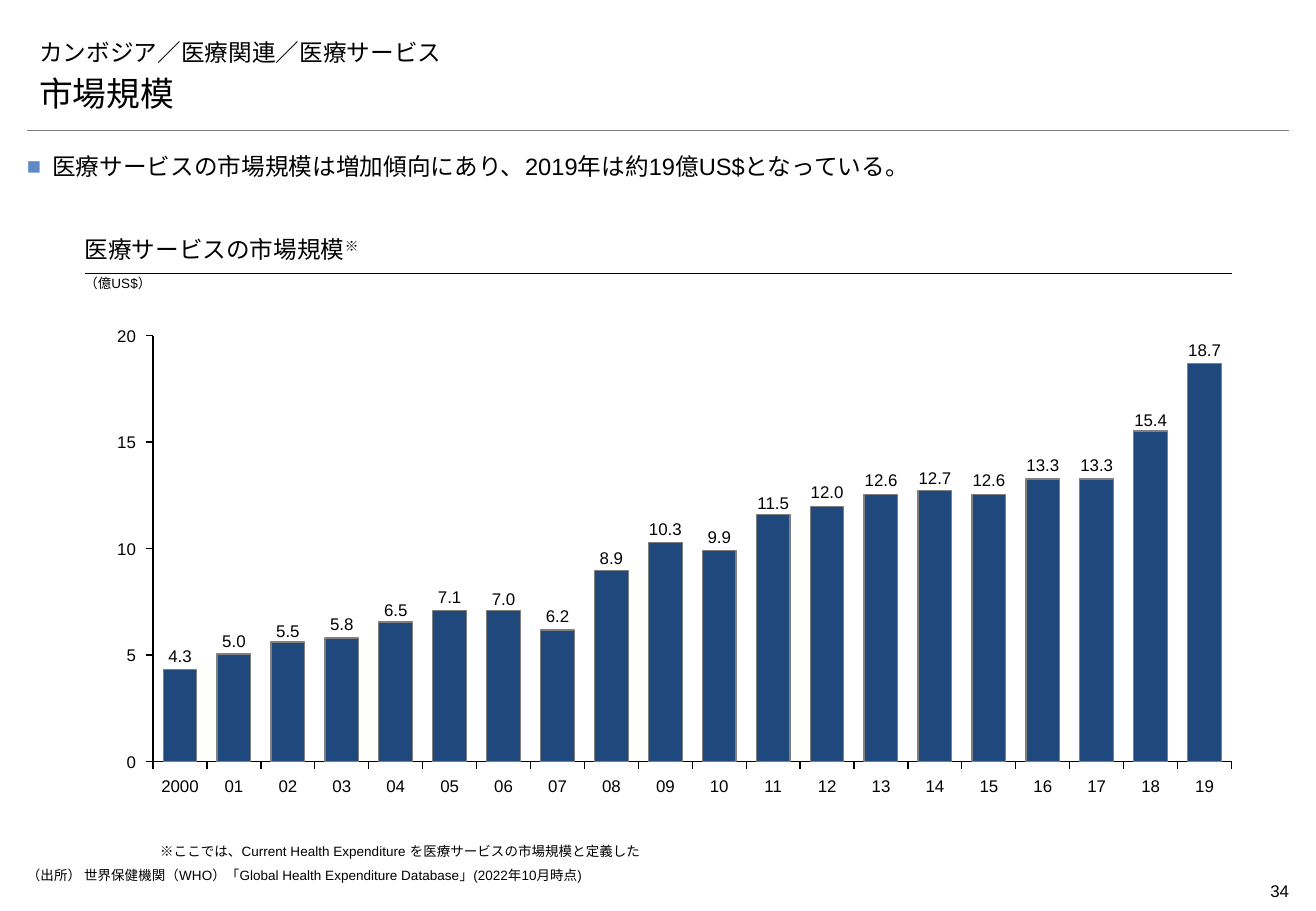
from lxml.etree import SubElement
from pptx import Presentation
from pptx.chart.data import CategoryChartData
from pptx.dml.color import RGBColor
from pptx.enum.chart import XL_CHART_TYPE as ChartType, XL_TICK_LABEL_POSITION as LabelPos, XL_TICK_MARK as Tick
from pptx.enum.shapes import MSO_CONNECTOR as Connector
from pptx.enum.text import MSO_ANCHOR as Anchor, MSO_AUTO_SIZE as AutoSize, PP_ALIGN as Align
from pptx.oxml.ns import qn
from pptx.util import Pt

YEARS = ["2000"] + [f"{year:02}" for year in range(1, 20)]
SPENDING = [4.3, 5.0, 5.5, 5.8, 6.5, 7.1, 7.0, 6.2, 8.9, 10.3,
            9.9, 11.5, 12.0, 12.6, 12.7, 12.6, 13.3, 13.3, 15.4, 18.7]
BAR_HEIGHTS = [23, 27, 30, 31, 35, 38, 38, 33, 48, 55,
               53, 62, 64, 67, 68, 67, 71, 71, 83, 100]
CHART_LEFT, CHART_TOP, CHART_WIDTH, CHART_HEIGHT = 84.2, 193.7, 652.3, 265.7
PLOT_LAYOUT = {"x": 0.01, "y": 0.02, "w": 0.98, "h": 0.95}
PLOT_LEFT = CHART_LEFT + PLOT_LAYOUT["x"] * CHART_WIDTH
PLOT_HEIGHT = PLOT_LAYOUT["h"] * CHART_HEIGHT
BASELINE = CHART_TOP + PLOT_LAYOUT["y"] * CHART_HEIGHT + PLOT_HEIGHT
YEAR_STEP = PLOT_LAYOUT["w"] * CHART_WIDTH / len(YEARS)
AXIS_TOP = 20
LABEL_HEIGHT = 12


def color(hex_code):
    return RGBColor.from_string(hex_code)


def style_line(line, hex_code, width):
    line.color.rgb = color(hex_code)
    line.width = Pt(width)


def add_bullet(paragraph, mark, hex_code):
    props = paragraph._p.get_or_add_pPr()
    if not mark:
        SubElement(props, qn("a:buNone"))
        return
    fill = SubElement(props, qn("a:buClr"))
    SubElement(fill, qn("a:srgbClr"), val=hex_code)
    SubElement(props, qn("a:buFont"), typeface="Arial")
    SubElement(props, qn("a:buChar"), char=mark)


def write(holder, text, box, size=10, font="Arial", align=Align.LEFT, anchor=Anchor.TOP,
          insets=(0, 0, 0, 0), wrap=True, raised="", bullet="", hanging=0,
          line_spacing=1.0, after=0):
    holder.left, holder.top, holder.width, holder.height = map(Pt, box)
    frame = holder.text_frame
    frame.auto_size = AutoSize.NONE
    frame.word_wrap = wrap
    frame.vertical_anchor = anchor
    (frame.margin_left, frame.margin_top,
     frame.margin_right, frame.margin_bottom) = map(Pt, insets)
    paragraph = frame.paragraphs[0]
    add_bullet(paragraph, bullet, "5F8AC3")
    props = paragraph._p.get_or_add_pPr()
    props.set("marL", str(Pt(hanging)))
    props.set("indent", str(-Pt(hanging)))
    paragraph.alignment = align
    paragraph.line_spacing = line_spacing
    paragraph.space_before = Pt(0)
    paragraph.space_after = Pt(after)
    for part in filter(None, (text, raised)):
        run = paragraph.add_run()
        run.text = part
        run.font.size = Pt(size)
        run.font.name = font
        run.font.color.rgb = color("000000")
        if part == raised:
            run.font._element.set("baseline", "30000")


def add_text(slide, text, box, **style):
    write(slide.shapes.add_textbox(0, 0, 0, 0), text, box, **style)


def add_rule(slide, left, right, y, hex_code, width):
    rule = slide.shapes.add_connector(Connector.STRAIGHT, Pt(left), Pt(y), Pt(right), Pt(y))
    style_line(rule.line, hex_code, width)
    SubElement(rule._element.spPr, qn("a:effectLst"))


def style_axis(axis):
    axis.has_major_gridlines = False
    axis.major_tick_mark = Tick.OUTSIDE
    axis.minor_tick_mark = Tick.NONE
    axis.tick_label_position = LabelPos.NONE
    style_line(axis.format.line, "000000", 0.75)


def fix_plot_area(chart):
    plot_area = chart._chartSpace.chart.plotArea
    layout = plot_area.find(qn("c:layout"))
    if layout is None:
        layout = SubElement(plot_area, qn("c:layout"))
        plot_area.insert(0, layout)
    manual = SubElement(layout, qn("c:manualLayout"))
    settings = {"layoutTarget": "inner", "xMode": "edge", "yMode": "edge", **PLOT_LAYOUT}
    for tag, value in settings.items():
        SubElement(manual, qn(f"c:{tag}"), val=str(value))


def add_market_chart(slide):
    data = CategoryChartData()
    data.categories = YEARS
    data.add_series("医療サービスの市場規模", BAR_HEIGHTS)
    place = map(Pt, (CHART_LEFT, CHART_TOP, CHART_WIDTH, CHART_HEIGHT))
    chart = slide.shapes.add_chart(ChartType.COLUMN_STACKED, *place, data).chart
    chart.has_legend = False
    chart.has_title = False
    chart.font.size = Pt(10)
    chart.font.name = "Arial"
    chart.font.color.rgb = color("000000")
    fix_plot_area(chart)
    style_axis(chart.category_axis)
    style_axis(chart.value_axis)
    chart.value_axis.minimum_scale = 0
    chart.value_axis.maximum_scale = 107
    chart.value_axis.major_unit = 26.75
    plot = chart.plots[0]
    plot.gap_width = 60
    plot.overlap = 100
    plot.vary_by_categories = False
    bars = plot.series[0]
    bars.format.fill.solid()
    bars.format.fill.fore_color.rgb = color("1F497D")
    style_line(bars.format.line, "808080", 0.75)


def level(amount):
    return BASELINE - amount / AXIS_TOP * PLOT_HEIGHT


def add_chart_labels(slide):
    for amount in range(0, AXIS_TOP + 1, 5):
        add_text(slide, str(amount), (66.6, level(amount) - LABEL_HEIGHT / 2, 14, LABEL_HEIGHT),
                 align=Align.RIGHT, anchor=Anchor.MIDDLE, wrap=False)
    for index, (year, amount) in enumerate(zip(YEARS, SPENDING)):
        left = PLOT_LEFT + index * YEAR_STEP
        add_text(slide, year, (left, 460, YEAR_STEP, LABEL_HEIGHT),
                 align=Align.CENTER, wrap=False)
        add_text(slide, f"{amount:.1f}",
                 (left, level(amount) - 14.2, YEAR_STEP, LABEL_HEIGHT),
                 align=Align.CENTER, anchor=Anchor.BOTTOM, wrap=False)


def main():
    deck = Presentation()
    deck.slide_width, deck.slide_height = Pt(780), Pt(540)
    slide = deck.slides.add_slide(deck.slide_layouts[3])
    heading, topic, message = slide.placeholders

    add_rule(slide, 16, 764, 77.2, "7F7F7F", 0.25)
    heading_style = dict(font="Montserrat", anchor=Anchor.BOTTOM, insets=(7.2, 3.6, 7.2, 3.6))
    write(heading, "カンボジア／医療関連／医療サービス", (16, 15, 748, 28), size=14, **heading_style)
    write(topic, "市場規模", (16, 43, 748, 28), size=20, **heading_style)
    write(message, "医療サービスの市場規模は増加傾向にあり、2019年は約19億US$となっている。",
          (16, 88.5, 748, 18), size=14, align=Align.JUSTIFY, bullet="■", hanging=15,
          line_spacing=1.1, after=2)

    add_rule(slide, 50.2, 730, 162, "000000", 0.75)
    add_text(slide, "医療サービスの市場規模", (50, 139.7, 680, 22.3), size=14, font="Montserrat",
             anchor=Anchor.BOTTOM, insets=(0, 3.6, 0, 5.8), raised="※")
    add_text(slide, "（億US$）", (50, 162, 65.5, 11.5), size=8, anchor=Anchor.MIDDLE)
    add_market_chart(slide)
    add_chart_labels(slide)

    add_text(slide, "※ここでは、Current Health Expenditure を医療サービスの市場規模と定義した",
             (95, 499.7, 601, 9.4), size=8)
    add_text(slide, "（出所） 世界保健機関（WHO）「Global Health Expenditure Database」(2022年10月時点)",
             (16, 514, 442, 11.5), size=8, hanging=35)
    add_text(slide, "34", (708, 518.4, 56, 19.4), align=Align.RIGHT, insets=(0, 3.6, 0, 3.6))
    deck.save("out.pptx")


if __name__ == "__main__":
    main()
